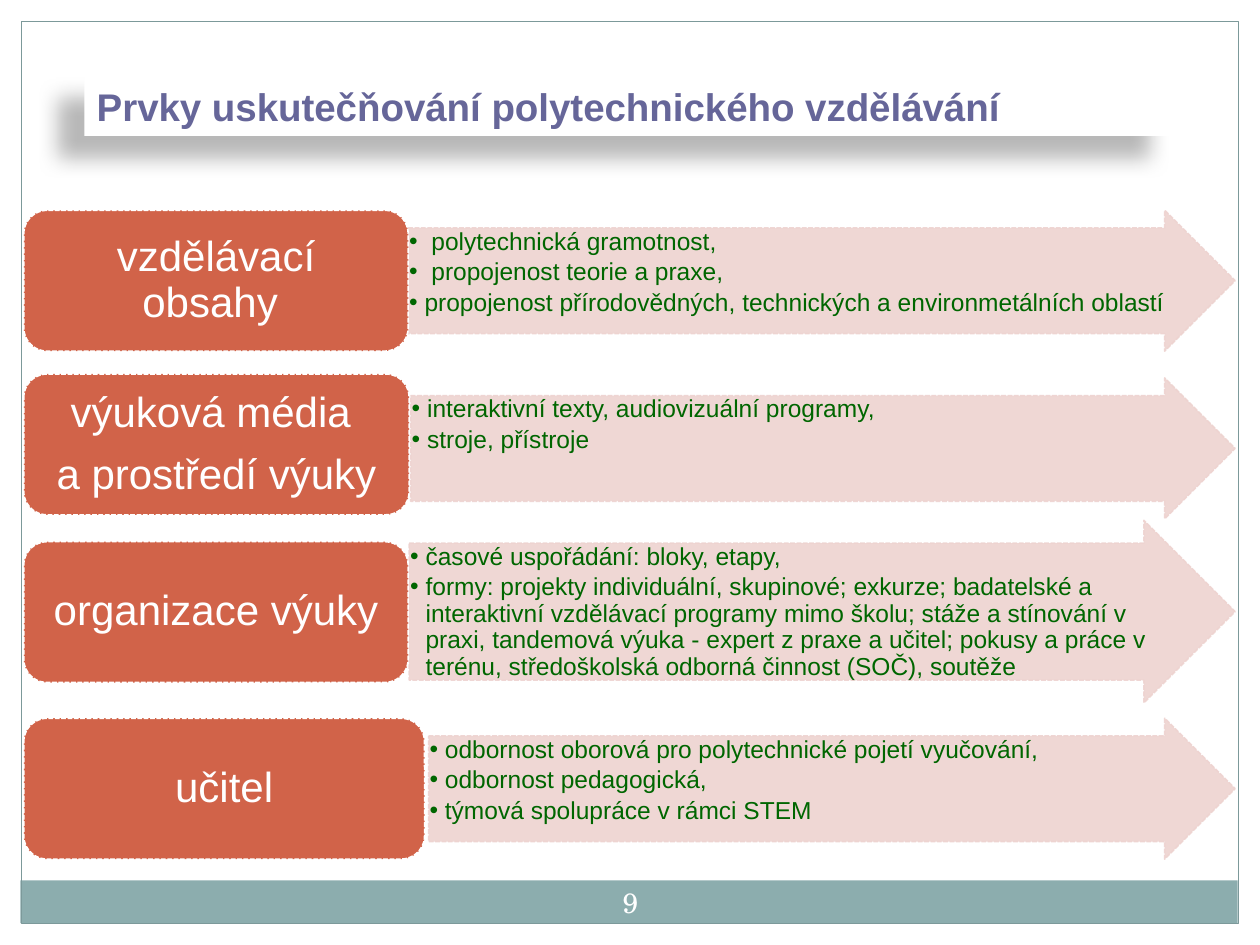
from dataclasses import dataclass

from lxml.etree import SubElement
from pptx import Presentation
from pptx.dml.color import RGBColor
from pptx.enum.dml import MSO_LINE as Dash
from pptx.enum.shapes import MSO_SHAPE as Shape
from pptx.enum.text import MSO_ANCHOR as Anchor, PP_ALIGN as Align
from pptx.oxml.ns import qn
from pptx.util import Cm, Pt


@dataclass(frozen=True)
class Theme:
    """Colours, fonts and type sizes of the slide."""
    white: str = "FFFFFF"
    band: str = "8CADAE"
    frame: str = "7C999A"
    title: str = "666699"
    label: str = "D16349"
    arrow: str = "EED3D0"
    detail: str = "006600"
    shadow: str = "000000"
    font: str = "Arial"
    number_font: str = "TeX Gyre Schola"
    title_size: float = 22
    label_size: float = 24
    detail_size: float = 14
    number_size: float = 16


THEME = Theme()
RIGHT = 24.9
LABEL_LEFT = 0.48
LABEL_HEIGHT = 2.84

# label lines, label top and width, arrow left, top and height, details
ROWS = [
    (["vzdělávací obsahy "], 4.24, 7.75, 8.23, 4.24, 2.84,
     [" polytechnická gramotnost,",
      " propojenost teorie a praxe,",
      "propojenost přírodovědných, technických a environmetálních oblastí"]),
    (["výuková média ", "a prostředí výuky"], 7.54, 7.77, 8.28, 7.62, 2.84,
     ["interaktivní texty, audiovizuální programy,",
      "stroje, přístroje"]),
    (["organizace výuky"], 10.92, 7.75, 8.25, 10.49, 3.68,
     ["časové uspořádání: bloky, etapy,",
      "formy: projekty individuální, skupinové; exkurze; badatelské a "
      "interaktivní vzdělávací programy mimo školu; stáže a stínování v "
      "praxi, tandemová výuka - expert z praxe a učitel; pokusy a práce v "
      "terénu, středoškolská odborná činnost (SOČ), soutěže"]),
    (["učitel"], 14.48, 8.08, 8.64, 14.48, 2.84,
     ["odbornost oborová pro polytechnické pojetí vyučování,",
      "odbornost pedagogická,",
      "týmová spolupráce v rámci STEM"]),
]


def add_bullet(p, indent):
    """Give a paragraph a hanging round bullet."""
    pPr = p._p.get_or_add_pPr()
    pPr.set("marL", str(Cm(indent)))
    pPr.set("indent", str(-Cm(indent)))
    SubElement(pPr, qn("a:buFont"), typeface="Arial")
    SubElement(pPr, qn("a:buChar"), char="•")


def write(sp, lines, size, color, font=THEME.font, bold=False, align=Align.LEFT,
          anchor=Anchor.MIDDLE, insets=(0.25, 0.13), spacing=None, after=0, bullet=None):
    """Write lines of text into a shape, one paragraph each."""
    tf = sp.text_frame
    tf.word_wrap = True
    tf.vertical_anchor = anchor
    tf.margin_left = tf.margin_right = Cm(insets[0])
    tf.margin_top = tf.margin_bottom = Cm(insets[1])
    for i, line in enumerate(lines):
        p = tf.add_paragraph() if i else tf.paragraphs[0]
        p.alignment = align
        p.line_spacing = spacing
        p.space_after = Pt(after)
        if bullet:
            add_bullet(p, bullet)
        r = p.add_run()
        r.text = line
        r.font.name = font
        r.font.size = Pt(size)
        r.font.bold = bold
        r.font.color.rgb = RGBColor.from_string(color)


def add_box(s, kind, box, fill=None, line=None, width=0.9, dash=None, alpha=None):
    """Add a preset shape with its fill, outline and opacity."""
    sp = s.shapes.add_shape(kind, *map(Cm, box))
    sp.shadow.inherit = False
    if fill:
        sp.fill.solid()
        sp.fill.fore_color.rgb = RGBColor.from_string(fill)
    else:
        sp.fill.background()
    if line:
        sp.line.color.rgb = RGBColor.from_string(line)
        sp.line.width = Pt(width)
        sp.line.dash_style = dash
    else:
        sp.line.fill.background()
    if alpha:
        for clr in list(sp._element.spPr.iter(qn("a:srgbClr"))):
            SubElement(clr, qn("a:alpha"), val=str(alpha * 1000))
    return sp


def add_shadow(sp, blur, dist, angle, alpha):
    """Cast a soft outer shadow from a shape."""
    effects = sp._element.spPr.find(qn("a:effectLst"))
    shadow = SubElement(effects, qn("a:outerShdw"), blurRad=str(Pt(blur)),
                        dist=str(Pt(dist)), dir=str(angle * 60000),
                        algn="ctr", rotWithShape="0")
    clr = SubElement(shadow, qn("a:srgbClr"), val=THEME.shadow)
    SubElement(clr, qn("a:alpha"), val=str(alpha * 1000))


def add_frame(s, number):
    """Draw the footer band, the page border and the slide number."""
    add_box(s, Shape.RECTANGLE, (0.41, 17.75, 24.54, 0.86), THEME.band)
    add_box(s, Shape.RECTANGLE, (0.43, 0.43, 24.54, 18.19), line=THEME.frame, width=0.75)
    tb = s.shapes.add_textbox(*map(Cm, (11.86, 17.58, 1.7, 1.22)))
    write(tb, [number], THEME.number_size, THEME.white, font=THEME.number_font,
          align=Align.CENTER, insets=(0.13, 0.13))


def add_title(s, text):
    """Add the title on its shadowed plate."""
    sp = add_box(s, Shape.RECTANGLE, (1.7, 1.52, 22, 1.22), THEME.white)
    add_shadow(sp, 11.8, 19.7, 141, 28)
    write(sp, [text], THEME.title_size, THEME.title, bold=True)


def add_row(s, label, label_top, label_width, left, top, height, details):
    """Add one arrow of details with its label at the tail."""
    arrow = add_box(s, Shape.RIGHT_ARROW, (left, top, RIGHT - left, height),
                    THEME.arrow, THEME.arrow, dash=Dash.SQUARE_DOT, alpha=90)
    arrow.adjustments[0] = 0.75
    write(arrow, details, THEME.detail_size, THEME.detail, anchor=Anchor.TOP,
          insets=(0.02, 0.02), spacing=0.9, after=2.3, bullet=0.31)
    sp = add_box(s, Shape.ROUNDED_RECTANGLE,
                 (LABEL_LEFT, label_top, label_width, LABEL_HEIGHT),
                 THEME.label, THEME.white, dash=Dash.SQUARE_DOT)
    write(sp, label, THEME.label_size, THEME.white, align=Align.CENTER,
          insets=(0.3, 0.13), spacing=0.9, after=9.5)


def main():
    """Build the slide and save it."""
    prs = Presentation()
    prs.slide_width, prs.slide_height = Cm(25.4), Cm(19.05)
    s = prs.slides.add_slide(prs.slide_layouts[6])
    add_frame(s, "9")
    add_title(s, "Prvky uskutečňování polytechnického vzdělávání")
    for row in ROWS:
        add_row(s, *row)
    prs.save("out.pptx")


if __name__ == "__main__":
    main()
